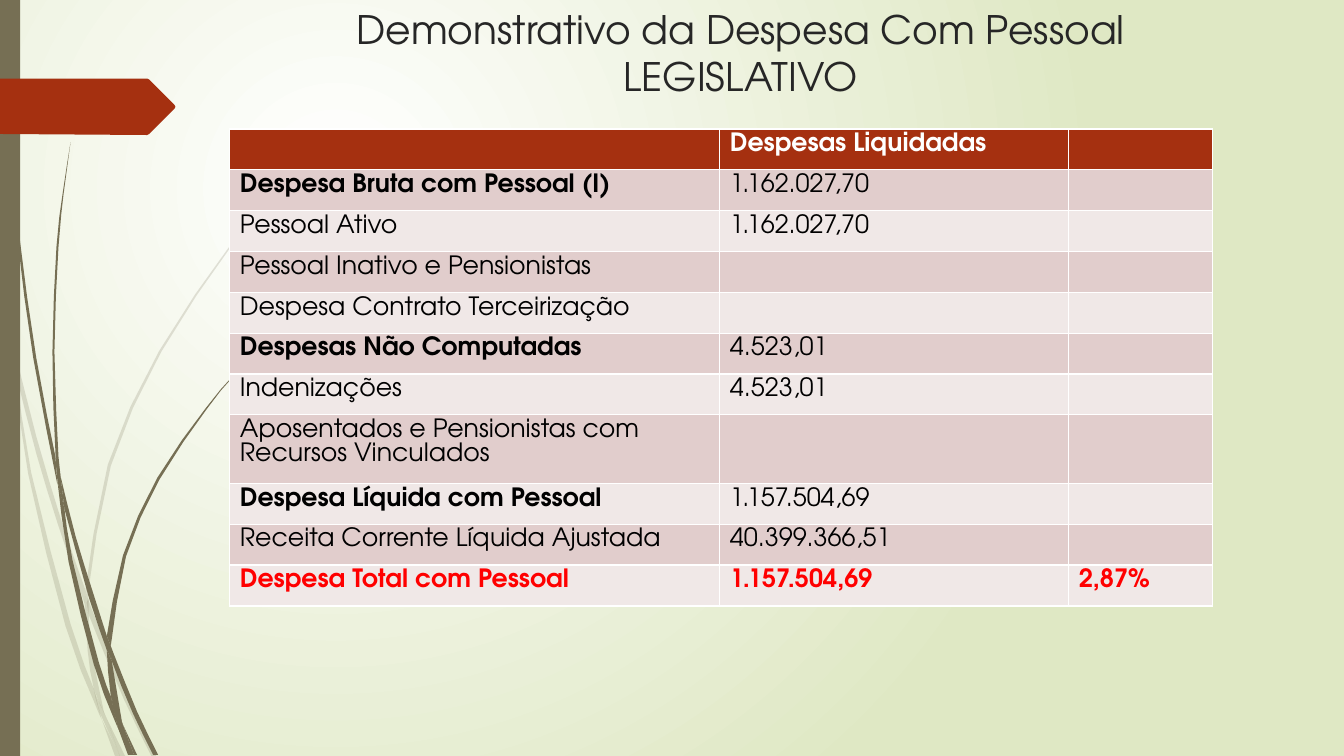
from dataclasses import dataclass

from lxml.etree import SubElement
from pptx import Presentation
from pptx.dml.color import RGBColor
from pptx.enum.shapes import MSO_SHAPE
from pptx.enum.text import MSO_ANCHOR, PP_ALIGN
from pptx.oxml.ns import qn
from pptx.util import Inches, Pt


@dataclass(frozen=True)
class Theme:
    font: str = "TeX Gyre Adventor"
    title_size: int = 28
    cell_size: int = 18
    title: str = "262626"
    rust: str = "A53010"
    olive: str = "766F54"
    white: str = "FFFFFF"
    sage: str = "DFE8C4"
    black: str = "000000"
    red: str = "FF0000"
    bands: tuple = ("E1CDCC", "F0E8E7")


THEME = Theme()

FAINT_STEMS = [
    ([(0.11, 3.5), (0.09, 3.22), (0, 2.82)], [(0, 2.99), (0.1, 3.44)]),
    ([(0.17, 3.76), (0.36, 4.5), (0.58, 5.22), (0.84, 5.99)],
     [(0.85, 5.86), (0.62, 5.2), (0.36, 4.33), (0.14, 3.45)]),
    ([(0.88, 5.96), (0.88, 6.1), (1.23, 6.94), (1.5, 7.5)],
     [(1.55, 7.5), (1.27, 6.92), (0.92, 6.07)]),
    ([(1.05, 7.11), (1.19, 7.5)], [(1.24, 7.5)]),
    ([(0.11, 3.5), (0.28, 4.7), (0.65, 6.21), (0.92, 6.93), (1.01, 7.14)],
     [(0.93, 6.83), (0.7, 6.19), (0.31, 4.69), (0.17, 3.76)]),
    ([(0.84, 5.99), (0.87, 6.46), (0.93, 6.83), (1.05, 7.11)],
     [(1.03, 7.06), (0.91, 6.46), (0.88, 6.1)]),
    ([(0.88, 5.96), (0.88, 5.84), (1.1, 4.62), (1.6, 3.49), (2.29, 2.45),
      (2.68, 1.98), (3.12, 1.54)],
     [(3.12, 1.53), (2.68, 1.97), (2.28, 2.44), (1.58, 3.48), (1.07, 4.61),
      (0.85, 5.84)]),
    ([(1.01, 7.14), (1.14, 7.5)], [(1.19, 7.5)]),
    ([(0.88, 6.1), (0.88, 5.96)], [(0.85, 5.86), (0.84, 5.99)]),
    ([(0.93, 6.83), (0.99, 7.07), (1.19, 7.5)],
     [(1.19, 7.5), (1.05, 7.11), (0.96, 6.92)]),
]

DARK_STEMS = [
    ([(0.03, 0), (0.04, 0.48), (0.07, 1.1), (0.17, 2.33), (0.33, 3.55),
      (0.57, 4.81)],
     [(0.55, 4.53), (0.36, 3.55), (0.19, 2.32), (0.08, 1.09), (0.05, 0.48),
      (0.04, 0)]),
    ([(0.64, 5.05), (0.88, 5.92), (1.06, 6.45)],
     [(1.06, 6.31), (0.93, 5.9), (0.75, 5.32), (0.6, 4.72)]),
    ([(1.1, 6.41), (1.11, 6.56), (1.32, 7.08), (1.52, 7.49)],
     [(1.57, 7.49), (1.36, 7.06), (1.13, 6.49)]),
    ([(0.57, 4.77), (0.68, 5.57), (0.93, 6.59), (1.11, 7.08), (1.17, 7.22)],
     [(1.1, 6.91), (0.98, 6.57), (0.72, 5.56), (0.64, 5.05)]),
    ([(0.7, 1.41), (0.62, 1.93), (0.56, 2.45), (0.52, 3.49), (0.55, 4.49),
      (0.6, 4.72)],
     [(0.58, 4.53), (0.54, 3.49), (0.58, 2.45), (0.63, 1.93)]),
    ([(1.22, 7.19), (1.33, 7.49)], [(1.36, 7.49)]),
    ([(0.55, 4.49), (0.57, 4.77), (0.64, 5.05)], [(0.6, 4.72)]),
    ([(1.1, 6.41), (1.11, 6.33), (1.25, 5.52), (1.58, 4.76), (2.05, 4.06),
      (2.31, 3.74), (2.61, 3.44)],
     [(2.6, 3.44), (2.31, 3.73), (2.04, 4.05), (1.56, 4.74), (1.22, 5.51),
      (1.06, 6.31)]),
    ([(1.17, 7.22), (1.27, 7.49)], [(1.31, 7.49)]),
    ([(1.06, 6.45), (1.1, 6.91), (1.22, 7.19)], [(1.21, 7.16), (1.11, 6.56)]),
    ([(1.06, 6.45), (1.11, 6.56)], [(1.1, 6.41), (1.06, 6.31)]),
    ([(1.1, 6.91), (1.17, 7.22), (1.3, 7.49)], [(1.33, 7.49), (1.22, 7.19)]),
]

TAB_OUTLINE = [(0, 0.78), (1.46, 0.78), (1.48, 0.79), (1.73, 1.04),
               (1.74, 1.06), (1.73, 1.08), (1.48, 1.33), (1.46, 1.34),
               (0, 1.33)]

COLUMN_WIDTHS = (4.86, 3.46, 1.43)
EXPENSES = [
    ("", "Despesas Liquidadas", ""),
    ("Despesa Bruta com Pessoal (I)", "1.162.027,70", ""),
    ("Pessoal Ativo", "1.162.027,70", ""),
    ("Pessoal Inativo e Pensionistas", "", ""),
    ("Despesa Contrato Terceirização", "", ""),
    ("Despesas Não Computadas", "4.523,01", ""),
    ("Indenizações", "4.523,01", ""),
    ("Aposentados e Pensionistas com Recursos Vinculados", "", ""),
    ("Despesa Líquida com Pessoal", "1.157.504,69", ""),
    ("Receita Corrente Líquida Ajustada", "40.399.366,51", ""),
    ("Despesa Total com Pessoal", "1.157.504,69", "2,87%"),
]
SUBTOTAL_ROWS = (1, 5, 8)
TOTAL_ROW = len(EXPENSES) - 1


def set_font(paragraph, size, color, bold=False):
    font = paragraph.font
    font.name, font.size, font.bold = THEME.font, Pt(size), bold
    font.color.rgb = RGBColor.from_string(color)


def paint(shape, color, opacity=100):
    shape.shadow.inherit = False
    shape.fill.solid()
    shape.fill.fore_color.rgb = RGBColor.from_string(color)
    shape.line.fill.background()
    if opacity < 100:
        tone = shape.fill._xPr.find(qn("a:solidFill"))[0]
        SubElement(tone, qn("a:alpha"), val=str(opacity * 1000))


def smooth(knots):
    if len(knots) < 3:
        return knots
    padded = [knots[0], *knots, knots[-1]]
    curve = [knots[0]]
    for a, b, c, d in zip(padded, padded[1:], padded[2:], padded[3:]):
        middle = tuple((9 * (q + r) - p - s) / 16 for p, q, r, s in zip(a, b, c, d))
        curve += [middle, c]
    return curve


def add_outline(slide, points, color, opacity=100):
    start, *rest = [(Inches(x), Inches(y)) for x, y in points]
    builder = slide.shapes.build_freeform(*start)
    builder.add_line_segments(rest, close=True)
    paint(builder.convert_to_shape(), color, opacity)


def add_stems(slide, stems, opacity):
    for near_edge, far_edge in stems:
        add_outline(slide, smooth(near_edge) + smooth(far_edge), THEME.olive, opacity)


def set_background(slide):
    fill = slide.background.fill
    fill.gradient()
    for stop, color in zip(fill.gradient_stops, (THEME.white, THEME.sage)):
        stop.color.rgb = RGBColor.from_string(color)
    gradient = fill._xPr.find(qn("a:gradFill"))
    gradient.remove(gradient.find(qn("a:lin")))
    glow = SubElement(gradient, qn("a:path"), path="circle")
    SubElement(glow, qn("a:fillToRect"), l="50000", t="50000", r="100000", b="100000")


def add_title(slide, text):
    frame = slide.shapes.add_textbox(
        Inches(2.47), 0, Inches(9.75), Inches(1.4)).text_frame
    frame.word_wrap = True
    frame.vertical_anchor = MSO_ANCHOR.TOP
    heading = frame.paragraphs[0]
    heading.text = text
    heading.alignment = PP_ALIGN.CENTER
    set_font(heading, THEME.title_size, THEME.title)


def cell_style(row, column):
    if row == 0:
        return THEME.rust, THEME.white, True
    band = THEME.bands[(row - 1) % 2]
    if row == TOTAL_ROW:
        return band, THEME.red, True
    return band, THEME.black, column == 0 and row in SUBTOTAL_ROWS


def add_expense_table(slide):
    table = slide.shapes.add_table(
        len(EXPENSES), len(COLUMN_WIDTHS),
        Inches(2.28), Inches(1.28), Inches(9.75), Inches(4.46)).table
    for column, width in zip(table.columns, COLUMN_WIDTHS):
        column.width = Inches(width)
    for r, entries in enumerate(EXPENSES):
        for c, entry in enumerate(entries):
            cell = table.cell(r, c)
            band, color, bold = cell_style(r, c)
            cell.fill.solid()
            cell.fill.fore_color.rgb = RGBColor.from_string(band)
            cell.margin_top = cell.margin_bottom = Inches(0.04)
            paragraph = cell.text_frame.paragraphs[0]
            paragraph.text = entry
            set_font(paragraph, THEME.cell_size, color, bold)


def main():
    deck = Presentation()
    deck.slide_width, deck.slide_height = Inches(13.33), Inches(7.5)
    slide = deck.slides.add_slide(deck.slide_layouts[6])
    set_background(slide)
    add_stems(slide, FAINT_STEMS, 20)
    add_stems(slide, DARK_STEMS, 100)
    side_bar = slide.shapes.add_shape(MSO_SHAPE.RECTANGLE, 0, 0, Inches(0.2), Inches(7.5))
    paint(side_bar, THEME.olive)
    add_outline(slide, TAB_OUTLINE, THEME.rust)
    add_title(slide, "Demonstrativo da Despesa Com Pessoal LEGISLATIVO")
    add_expense_table(slide)
    deck.save("out.pptx")


if __name__ == "__main__":
    main()
